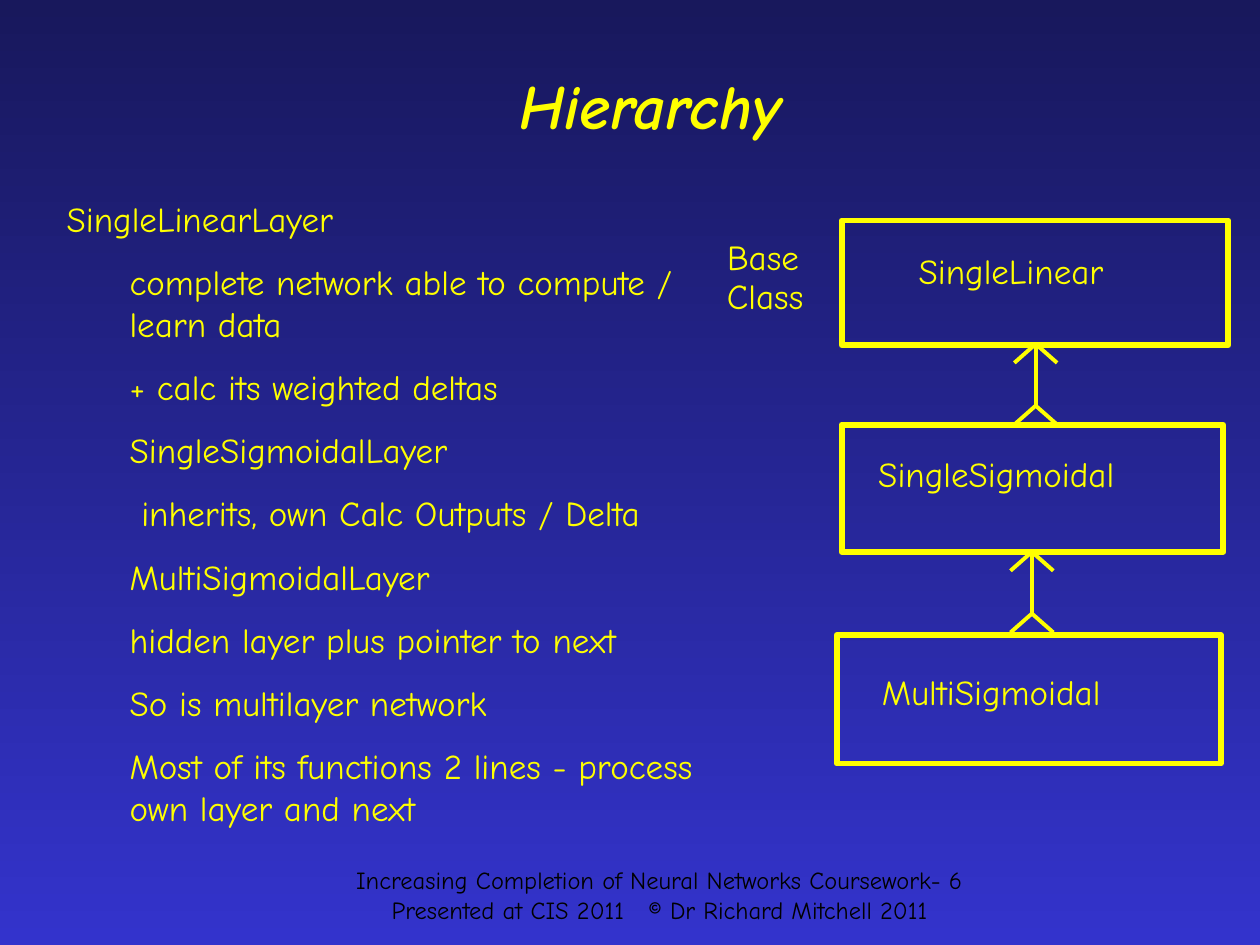
from lxml.etree import SubElement
from pptx import Presentation
from pptx.dml.color import RGBColor
from pptx.enum.shapes import MSO_CONNECTOR, MSO_SHAPE
from pptx.enum.text import MSO_ANCHOR, PP_ALIGN
from pptx.oxml.ns import qn
from pptx.util import Inches, Pt

YELLOW = "FFFF00"


def rgb(value):
    return RGBColor.from_string(value)


class SlideBuilder:
    font = "Comic Neue"

    def __init__(self, slide):
        self.s = slide

    def background(self, top, bottom):
        fill = self.s.background.fill
        fill.gradient()
        fill.gradient_angle = 270
        for stop, color in zip(fill.gradient_stops, (top, bottom)):
            stop.color.rgb = rgb(color)

    def box(self, left, top, width, height, wrap=True, inset=True):
        sp = self.s.shapes.add_textbox(
            Inches(left), Inches(top), Inches(width), Inches(height))
        tf = sp.text_frame
        tf.word_wrap = wrap
        if not inset:
            tf.margin_left = tf.margin_right = 0
            tf.margin_top = tf.margin_bottom = 0
        return tf

    def paragraph(self, tf, first, align=PP_ALIGN.LEFT):
        p = tf.paragraphs[0] if first else tf.add_paragraph()
        p.alignment = align
        return p

    def run(self, p, text, size=20, color=YELLOW, emphasis=False, spacing=0):
        r = p.add_run()
        r.text = text
        r.font.name = self.font
        r.font.size = Pt(size)
        r.font.color.rgb = rgb(color)
        if emphasis:
            r.font.bold = r.font.italic = True
        if spacing:
            r.font._element.set("spc", str(spacing * 100))

    def title(self, text):
        tf = self.box(0.59, 0.36, 9.14, 0.94)
        tf.vertical_anchor = MSO_ANCHOR.MIDDLE
        p = self.paragraph(tf, True, PP_ALIGN.CENTER)
        self.run(p, text, 36, emphasis=True)

    def footer(self, lines):
        tf = self.box(2.48, 6.82, 5.51, 0.5)
        for i, runs in enumerate(lines):
            p = self.paragraph(tf, i == 0, PP_ALIGN.CENTER)
            for text, spacing in runs:
                self.run(p, text, 14, "000000", spacing=spacing)

    def outline(self, heading, items):
        tf = self.box(0.43, 1.52, 5.28, 5.15)
        for i, text in enumerate([heading] + items):
            p = self.paragraph(tf, i == 0)
            p.space_after = Pt(6)
            if i:
                p.space_before = Pt(6)
                p.level = 1
                p._p.get_or_add_pPr().set("marL", str(Inches(0.5)))
            self.run(p, text)

    def label(self, left, top, width, text):
        tf = self.box(left, top, width, 0.34, wrap=False, inset=False)
        self.run(self.paragraph(tf, True), text)

    def class_box(self, left, top, width, height):
        sp = self.s.shapes.add_shape(
            MSO_SHAPE.RECTANGLE,
            Inches(left), Inches(top), Inches(width), Inches(height))
        sp.shadow.inherit = False
        sp.fill.background()
        sp.line.color.rgb = rgb(YELLOW)
        sp.line.width = Pt(3.38)

    def line(self, x1, y1, x2, y2):
        sp = self.s.shapes.add_connector(
            MSO_CONNECTOR.STRAIGHT,
            Inches(x1), Inches(y1), Inches(x2), Inches(y2))
        sp.line.color.rgb = rgb(YELLOW)
        sp.line.width = Pt(2.25)
        SubElement(sp._element.spPr, qn("a:effectLst"))

    def inheritance_arrow(self, x, top):
        fork = top + 0.49
        self.line(x, fork, x, top)
        for apex in (top, fork):
            for dx in (0.17, -0.17):
                self.line(x + dx, apex + 0.15, x, apex)


def main():
    prs = Presentation()
    prs.slide_width, prs.slide_height = Inches(10), Inches(7.5)
    b = SlideBuilder(prs.slides.add_slide(prs.slide_layouts[6]))

    b.background("18185C", "3333CC")
    b.footer([
        [("Increasing Completion of Neural Networks Coursework- 6", 0)],
        [("Presented at CIS 2011", 0), (" ", 9),
         ("© Dr Richard Mitchell 2011", 0)],
    ])
    b.title("Hierarchy")
    b.outline("SingleLinearLayer", [
        "complete network able to compute / learn data",
        "+ calc its weighted deltas",
        "SingleSigmoidalLayer",
        " inherits, own Calc Outputs / Delta",
        "MultiSigmoidalLayer",
        "hidden layer plus pointer to next",
        "So is multilayer network",
        "Most of its functions 2 lines - process own layer and next",
    ])

    for rect in ((6.68, 1.75, 3.07, 0.99),
                 (6.68, 3.37, 3.03, 1.01),
                 (6.64, 5.04, 3.05, 1.02)):
        b.class_box(*rect)
    for x, top in ((8.22, 2.73), (8.19, 4.38)):
        b.inheritance_arrow(x, top)
    for left, top, width, text in ((5.77, 1.87, 0.61, "Base"),
                                   (5.77, 2.18, 0.66, "Class"),
                                   (7.29, 1.98, 1.61, "SingleLinear"),
                                   (6.97, 3.59, 2.5, "SingleSigmoidal"),
                                   (7, 5.32, 1.93, "MultiSigmoidal")):
        b.label(left, top, width, text)

    prs.save("out.pptx")


if __name__ == "__main__":
    main()
